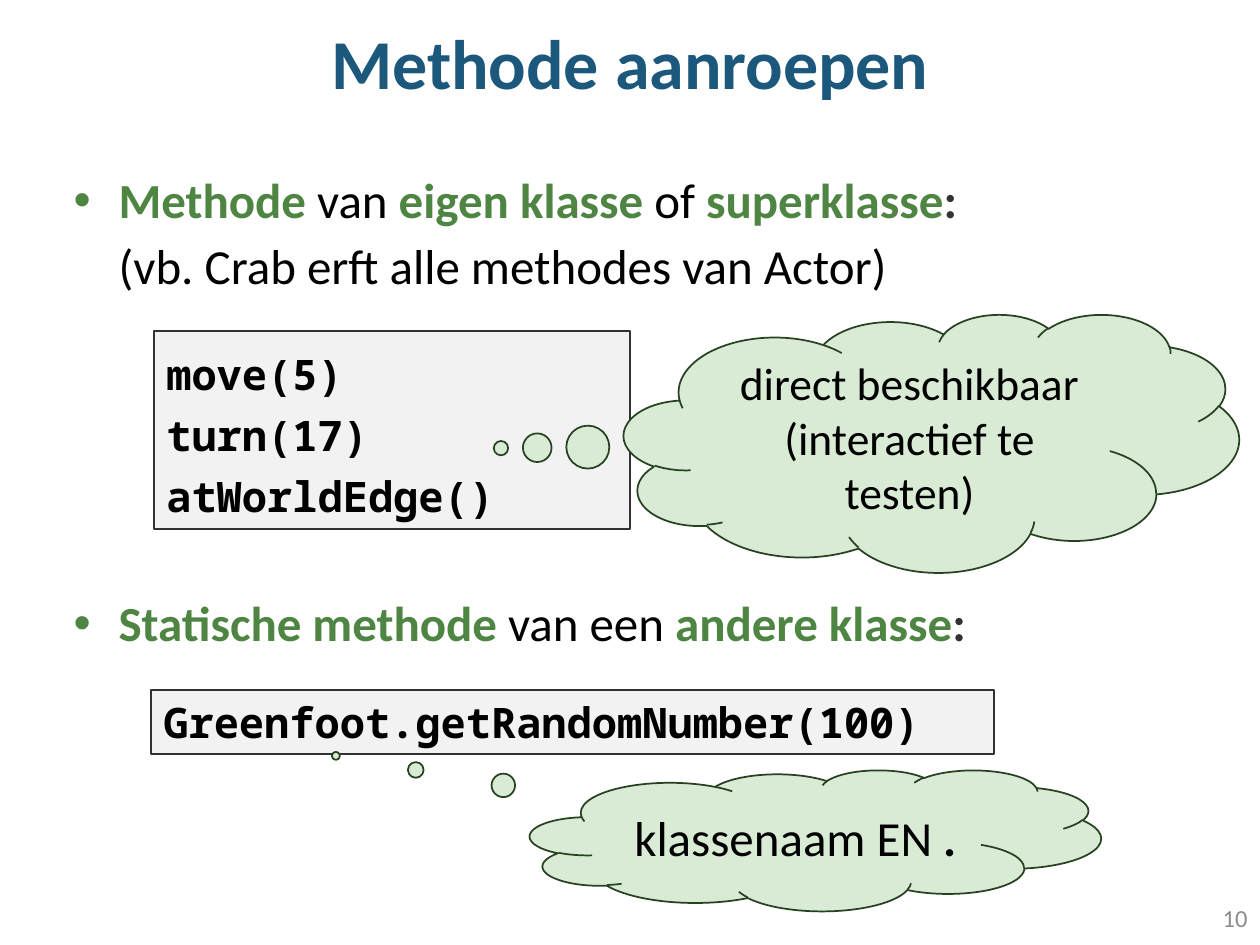
"""Build the slide on calling methods, with code boxes and cloud callouts."""
from lxml import etree
from pptx import Presentation
from pptx.dml.color import RGBColor
from pptx.enum.shapes import MSO_SHAPE
from pptx.enum.text import MSO_ANCHOR, MSO_AUTO_SIZE, PP_ALIGN
from pptx.oxml.ns import qn
from pptx.util import Emu, Pt

LEFT, MID, RIGHT = PP_ALIGN.LEFT, PP_ALIGN.CENTER, PP_ALIGN.RIGHT
TOP, CENTER = MSO_ANCHOR.TOP, MSO_ANCHOR.MIDDLE
RECT, CLOUD = MSO_SHAPE.RECTANGLE, MSO_SHAPE.CLOUD_CALLOUT
FIXED = MSO_AUTO_SIZE.NONE
SANS, MONO = "Calibri", "Noto Sans Mono"
BLACK, BLUE, GREEN, DARK, GREY = "000000", "1B587C", "4E8542", "323232", "8C8C8C"
PALE, MINT, EDGE = "F2F2F2", "D9EAD5", "274221"

TITLE = "Methode aanroepen"
BODY = [
    [("Methode ", GREEN, True), ("van ", BLACK, False), ("eigen klasse ", GREEN, True),
     ("of ", BLACK, False), ("superklasse", GREEN, True), (":", DARK, True)],
    [("(vb. Crab erft alle methodes van Actor)", BLACK, False)],
    [("Statische methode ", GREEN, True), ("van een ", BLACK, False),
     ("andere klasse", GREEN, True), (":", DARK, True)],
]
LAYOUT = [(7.5, True), (7.5, False), (173.8, True)]
CODES = [
    ((154, 331, 476, 198), ["move(5)", "turn(17)", "atWorldEdge()"], Pt(35)),
    ((151, 690, 843, 64), ["Greenfoot.getRandomNumber(100)"], None),
]
CLOUDS = [
    ((530, 770, 571, 141), [("klassenaam EN ", BLACK, False), (".", BLACK, True)],
     28, (-0.84, -0.6)),
    ((624, 314, 615, 258), [("direct beschikbaar (interactief te testen)", BLACK, False)],
     26, (-0.7, 0.02)),
]


def px(num):
    return Emu(round(num * 914400 / 126))


def tint(code):
    return RGBColor.from_string(code)


def place(item, box):
    item.left, item.top, item.width, item.height = map(px, box)


def write(frame, paras, size, font=SANS, align=LEFT, anchor=TOP, space=None):
    frame.word_wrap = True
    frame.auto_size = FIXED
    frame.vertical_anchor = anchor
    for pos, runs in enumerate(paras):
        para = frame.paragraphs[0] if pos == 0 else frame.add_paragraph()
        para.alignment = align
        if space:
            para.line_spacing = space
        for text, hue, bold in runs:
            run = para.add_run()
            run.text = text
            run.font.size = Pt(size)
            run.font.name = font
            run.font.bold = bold
            run.font.color.rgb = tint(hue)


def indent(para, gap, dot):
    para.space_before = Pt(gap)
    props = para._p.get_or_add_pPr()
    props.set("marL", str(px(62)))
    props.set("indent", str(px(-45) if dot else 0))
    if dot:
        etree.SubElement(props, qn("a:buFont")).set("typeface", "Arial")
        etree.SubElement(props, qn("a:buChar")).set("char", "•")
    else:
        etree.SubElement(props, qn("a:buNone"))


def draw(slide, kind, box, fill, line, width):
    shape = slide.shapes.add_shape(kind, *map(px, box))
    shape.shadow.inherit = False
    shape.fill.solid()
    shape.fill.fore_color.rgb = tint(fill)
    shape.line.color.rgb = tint(line)
    shape.line.width = Pt(width)
    return shape


def main():
    deck = Presentation()
    deck.slide_width, deck.slide_height = px(1260), px(945)
    slide = deck.slides.add_slide(deck.slide_layouts[1])

    title, body = slide.placeholders
    place(title, (0, 0, 1260, 134))
    write(title.text_frame, [[(TITLE, BLUE, True)]], 40, align=MID, anchor=CENTER, space=0.9)
    place(body, (44, 170, 1091, 662))
    write(body.text_frame, BODY, 28, space=0.9)
    for para, (gap, dot) in zip(body.text_frame.paragraphs, LAYOUT):
        indent(para, gap, dot)

    page = slide.shapes.add_textbox(*map(px, (976, 893, 284, 50)))
    write(page.text_frame, [[("10", GREY, False)]], 14, align=RIGHT, anchor=CENTER)

    for box, lines, space in CODES:
        shape = draw(slide, RECT, box, PALE, DARK, 0.75)
        write(shape.text_frame, [[(line, BLACK, True)] for line in lines], 24, MONO, space=space)

    for box, runs, size, tail in CLOUDS:
        shape = draw(slide, CLOUD, box, MINT, EDGE, 1)
        shape.adjustments[0], shape.adjustments[1] = tail
        write(shape.text_frame, [runs], size, align=MID, anchor=CENTER)

    deck.save("out.pptx")


if __name__ == "__main__":
    main()
